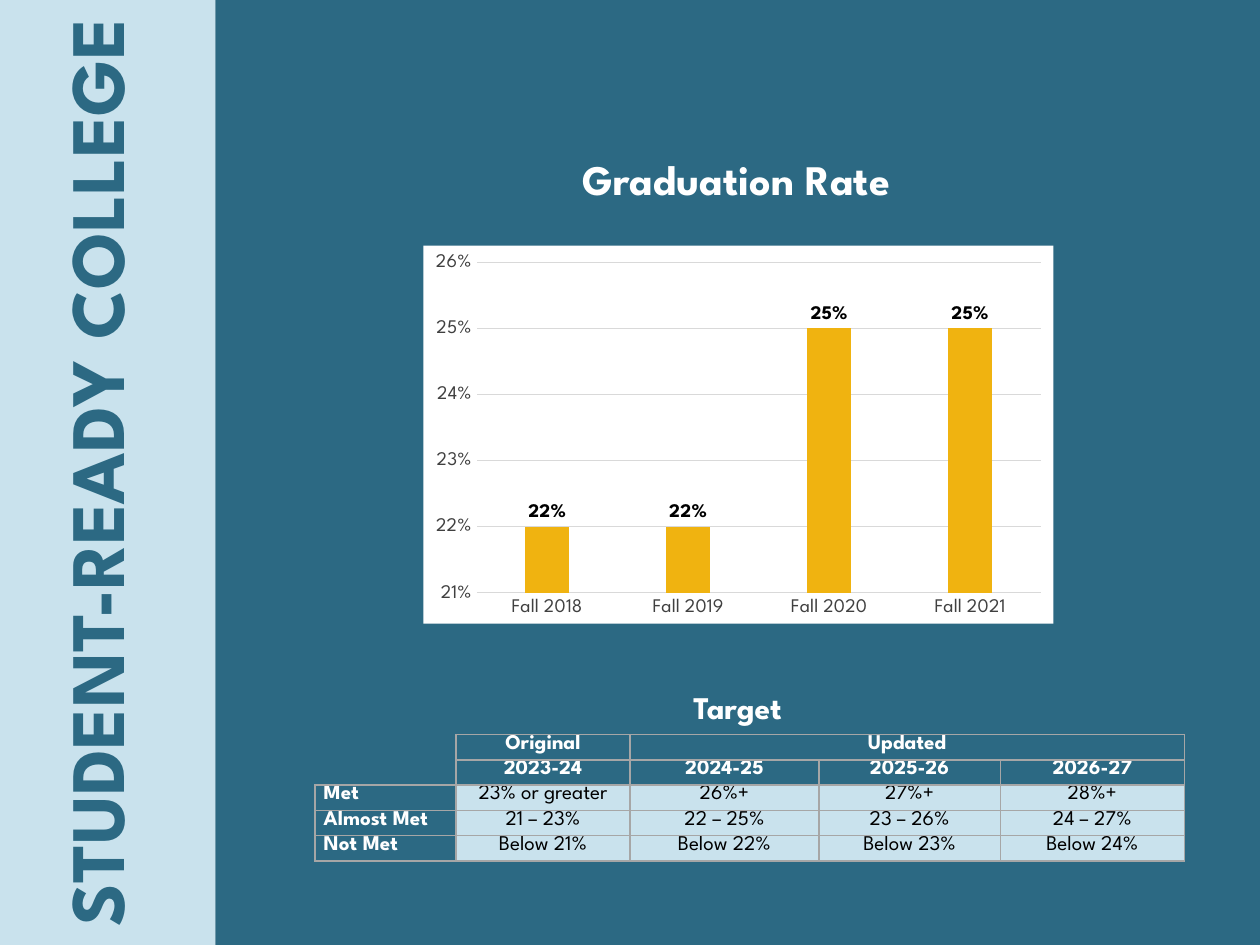
import dataclasses

import lxml.etree
import pptx
import pptx.chart.data
import pptx.dml.color
import pptx.enum.chart
import pptx.enum.shapes
import pptx.enum.text
import pptx.oxml
import pptx.oxml.ns
import pptx.util

Pt = pptx.util.Pt
ALIGN = pptx.enum.text.PP_ALIGN
FONT = "League Spartan"
COLORS = {
    "pale": "C9E2ED",
    "teal": "2C6983",
    "gold": "F0B310",
    "white": "FFFFFF",
    "black": "000000",
    "axis": "404040",
    "grid": "D9D9D9",
    "border": "A6A6A6",
}
COLUMN_WIDTHS = [80.64, 99.36, 108, 103.68, 105.12]
ROW_HEIGHT = 14.4
TARGET_ROWS = [
    ["", "Original", "Updated", "", ""],
    ["", "2023-24", "2024-25", "2025-26", "2026-27"],
    ["Met", "23% or greater", "26%+", "27%+", "28%+"],
    ["Almost Met", "21 – 23%", "22 – 25%", "23 – 26%", "24 – 27%"],
    ["Not Met", "Below 21%", "Below 22%", "Below 23%", "Below 24%"],
]


@dataclasses.dataclass
class Panel:
    left: float
    width: float
    color: str


@dataclasses.dataclass
class Heading:
    text: str
    left: float
    top: float
    width: float
    height: float
    size: float
    color: str = "white"
    rotation: float = 0
    space_after: float = 0


PANELS = [Panel(0, 123.12, "pale"), Panel(123.12, 596.88, "teal")]
HEADINGS = [
    Heading("STUDENT-READY COLLEGE", -189.36, 213.12, 540, 113.76, 44, "teal", 270),
    Heading("Graduation Rate", 145.44, 84.24, 550.8, 36, 24, space_after=12),
    Heading("Target", 285.84, 389.52, 271.44, 51.12, 18),
]


def rgb(name: str) -> pptx.dml.color.RGBColor:
    return pptx.dml.color.RGBColor.from_string(COLORS[name])


def set_font(font, size: float, color: str, bold: bool = False) -> None:
    font.name = FONT
    font.size = Pt(size)
    font.bold = bold
    font.color.rgb = rgb(color)


def draw_panel(slide, panel: Panel) -> None:
    shape = slide.shapes.add_shape(
        pptx.enum.shapes.MSO_SHAPE.RECTANGLE, Pt(panel.left), 0, Pt(panel.width), Pt(540)
    )
    shape.shadow.inherit = False
    shape.fill.solid()
    shape.fill.fore_color.rgb = rgb(panel.color)
    shape.line.fill.background()


def draw_heading(slide, heading: Heading) -> None:
    shape = slide.shapes.add_textbox(
        Pt(heading.left), Pt(heading.top), Pt(heading.width), Pt(heading.height)
    )
    shape.rotation = heading.rotation
    shape.text_frame.word_wrap = True
    shape.text_frame.auto_size = pptx.enum.text.MSO_AUTO_SIZE.SHAPE_TO_FIT_TEXT
    paragraph = shape.text_frame.paragraphs[0]
    paragraph.text = heading.text
    paragraph.alignment = ALIGN.CENTER
    paragraph.space_after = Pt(heading.space_after)
    set_font(paragraph.font, heading.size, heading.color, True)


def draw_chart(slide) -> None:
    data = pptx.chart.data.CategoryChartData(number_format="0%")
    data.categories = ["Fall 2018", "Fall 2019", "Fall 2020", "Fall 2021"]
    data.add_series("Series 1", [0.22, 0.22, 0.25, 0.25])
    chart = slide.shapes.add_chart(
        pptx.enum.chart.XL_CHART_TYPE.COLUMN_CLUSTERED,
        Pt(241.92), Pt(140.4), Pt(360), Pt(216), data,
    ).chart
    chart.has_legend = False
    chart.has_title = False
    chart.font.name = "Calibri"
    chart.font.size = Pt(10)
    background = pptx.oxml.parse_xml(
        f'<c:spPr {pptx.oxml.ns.nsdecls("c", "a")}><a:solidFill>'
        f'<a:srgbClr val="{COLORS["white"]}"/></a:solidFill><a:ln><a:noFill/></a:ln></c:spPr>'
    )
    chart._chartSpace.find(pptx.oxml.ns.qn("c:chart")).addnext(background)

    value_axis = chart.value_axis
    for axis in (chart.category_axis, value_axis):
        axis.major_tick_mark = pptx.enum.chart.XL_TICK_MARK.NONE
        axis.minor_tick_mark = pptx.enum.chart.XL_TICK_MARK.NONE
        set_font(axis.tick_labels.font, 11, "axis")
    value_axis.minimum_scale = 0.21
    value_axis.maximum_scale = 0.26
    value_axis.major_unit = 0.01
    value_axis.tick_labels.number_format = "0%"
    value_axis.tick_labels.number_format_is_linked = False
    value_axis.format.line.fill.background()
    for line in (chart.category_axis.format.line, value_axis.major_gridlines.format.line):
        line.color.rgb = rgb("grid")
        line.width = Pt(0.75)

    plot = chart.plots[0]
    plot.gap_width = 219
    plot.overlap = -27
    plot.vary_by_categories = False
    series = plot.series[0]
    series.format.fill.solid()
    series.format.fill.fore_color.rgb = rgb("gold")
    labels = series.data_labels
    labels.show_value = True
    labels.number_format = "0%"
    labels.number_format_is_linked = False
    labels.position = pptx.enum.chart.XL_LABEL_POSITION.OUTSIDE_END
    set_font(labels.font, 11, "black", True)


def set_borders(cell, visible_sides: str) -> None:
    properties = cell._tc.get_or_add_tcPr()
    for side in "LRTB":
        border = lxml.etree.SubElement(properties, pptx.oxml.ns.qn(f"a:ln{side}"), w=str(Pt(1)))
        if side in visible_sides:
            fill = lxml.etree.SubElement(border, pptx.oxml.ns.qn("a:solidFill"))
            lxml.etree.SubElement(fill, pptx.oxml.ns.qn("a:srgbClr"), val=COLORS["border"])
        else:
            lxml.etree.SubElement(border, pptx.oxml.ns.qn("a:noFill"))


def draw_cell(cell, text: str, row: int, column: int) -> None:
    is_header = row < 2 or column == 0
    is_corner = row < 2 and column == 0
    set_borders(cell, ("R", "RB")[row] if is_corner else "LRTB")
    cell.fill.solid()
    cell.fill.fore_color.rgb = rgb("teal" if is_header else "pale")
    cell.margin_left = cell.margin_right = Pt(5)
    cell.margin_top = cell.margin_bottom = 0
    paragraph = cell.text_frame.paragraphs[0]
    paragraph.alignment = ALIGN.CENTER if column else ALIGN.LEFT
    set_font(paragraph.font, 12, "white" if is_header else "black", is_header)
    if text:
        paragraph.text = text
    else:
        lxml.etree.SubElement(paragraph._p, pptx.oxml.ns.qn("a:endParaRPr"), sz="1000")


def draw_target_table(slide) -> None:
    table = slide.shapes.add_table(
        len(TARGET_ROWS), len(COLUMN_WIDTHS), Pt(180), Pt(419.76),
        Pt(sum(COLUMN_WIDTHS)), Pt(ROW_HEIGHT * len(TARGET_ROWS)),
    ).table
    table.first_row = False
    table.horz_banding = False
    for column, width in zip(table.columns, COLUMN_WIDTHS):
        column.width = Pt(width)
    for row_index, texts in enumerate(TARGET_ROWS):
        table.rows[row_index].height = Pt(ROW_HEIGHT)
        for column_index, text in enumerate(texts):
            draw_cell(table.cell(row_index, column_index), text, row_index, column_index)
    table.cell(0, 2).merge(table.cell(0, 4))


def main() -> None:
    presentation = pptx.Presentation()
    presentation.slide_width = Pt(720)
    presentation.slide_height = Pt(540)
    slide = presentation.slides.add_slide(presentation.slide_layouts[6])
    for panel in PANELS:
        draw_panel(slide, panel)
    for heading in HEADINGS:
        draw_heading(slide, heading)
    draw_chart(slide)
    draw_target_table(slide)
    presentation.save("out.pptx")


if __name__ == "__main__":
    main()
